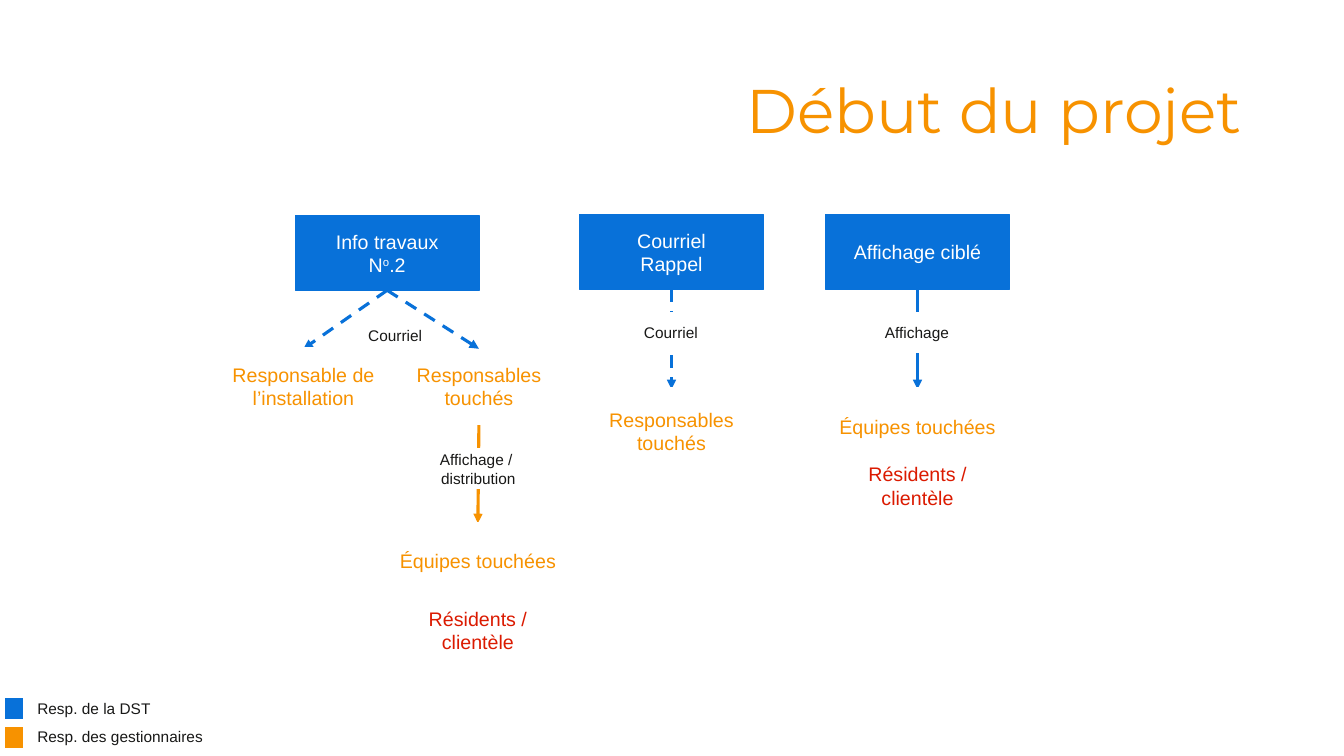
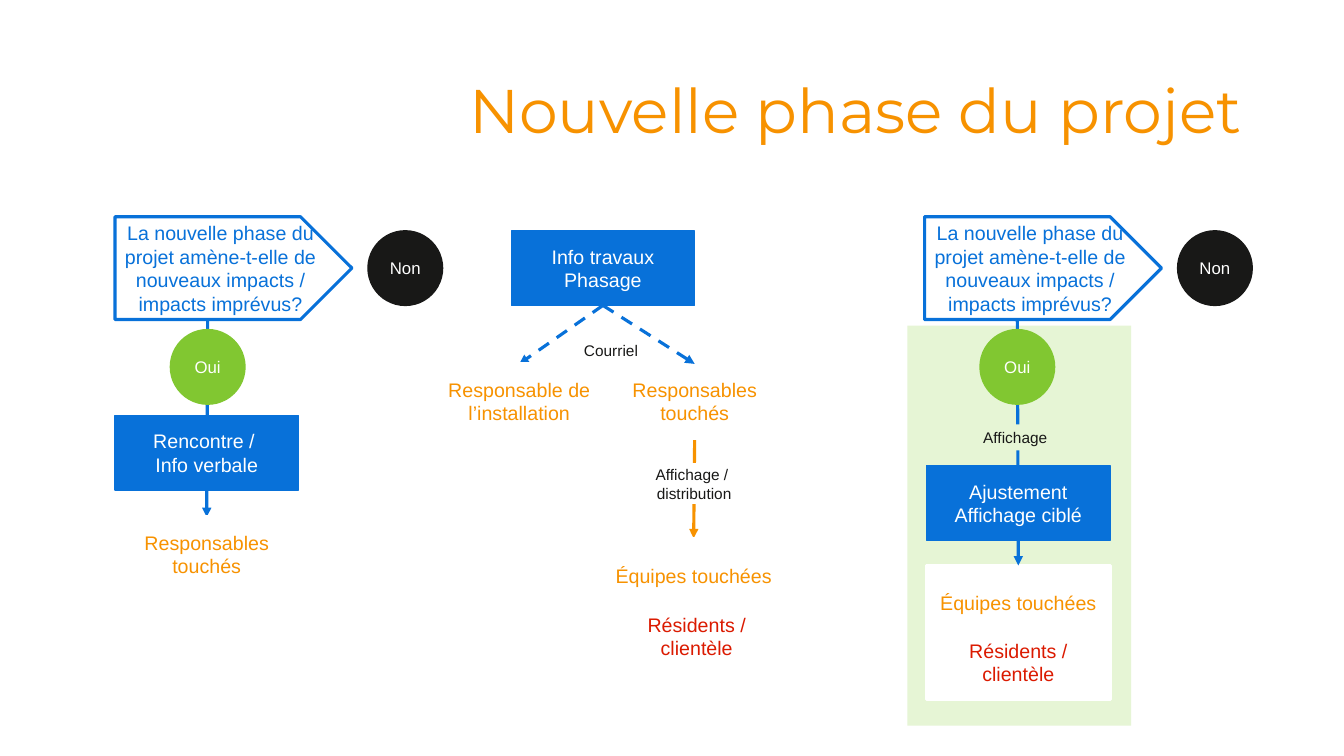
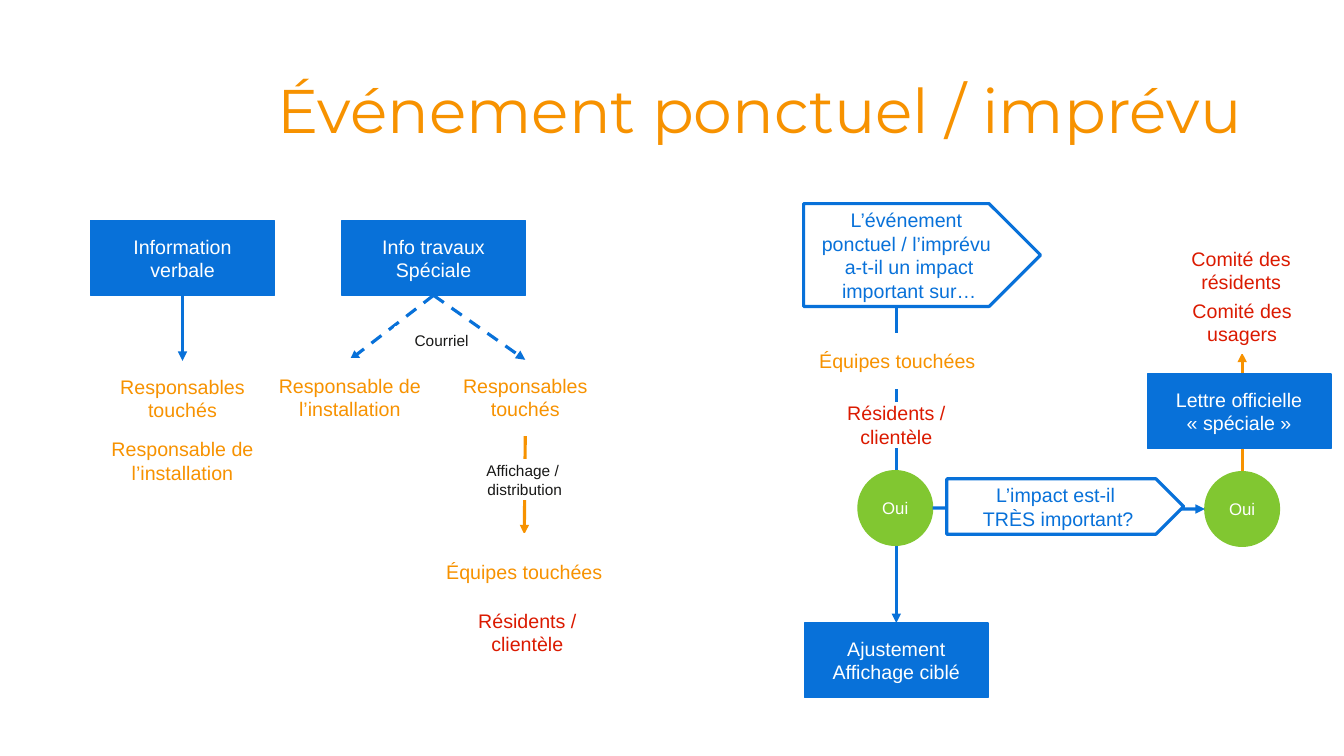
import dataclasses

import lxml.etree
import pptx
import pptx.dml.color
import pptx.enum.dml
import pptx.enum.shapes
import pptx.enum.text
import pptx.oxml.ns
import pptx.util

# Wording: "\n" breaks a line, "|" starts a paragraph, "^" toggles superscript
TITLES = ["Début du projet", "Nouvelle phase du projet", "Événement ponctuel / imprévu"]
SITE = "Responsable de l’installation"
LEADS = "Responsables touchés"
TEAMS = "Équipes touchées"
FOLK = "Résidents / clientèle"
POST = "Affichage"
SHARE = "Affichage / \ndistribution"
MAIL = "Courriel"
ADJUST = "Ajustement\nAffichage ciblé"
PHASE = "La nouvelle phase du projet amène-t-elle de nouveaux impacts / impacts imprévus?"
EVENT = "L’événement \nponctuel / l’imprévu \na-t-il un impact important sur…"
LEGEND = [("blue", "Resp. de la DST"), ("orange", "Resp. des gestionnaires")]


@dataclasses.dataclass(frozen=True)
class Theme:
    blue: str = "0871D9"
    orange: str = "F79200"
    red: str = "DB1A00"
    green: str = "81C731"
    pale: str = "E6F5D5"
    ink: str = "181817"
    white: str = "FFFFFF"
    head: str = "Montserrat"
    body: str = "Arial"
    title: int = 44
    text: int = 14
    mark: int = 12
    note: int = 11
    thick: float = 2.25
    thin: float = 1


THEME = Theme()
SIZE = (13.33, 7.5)
KIND = pptx.enum.shapes.MSO_SHAPE
TOP, LEFT, BOTTOM, RIGHT = range(4)


@dataclasses.dataclass(frozen=True)
class Style:
    w: float
    h: float
    fill: str
    edge: str
    ink: str
    size: int = THEME.text
    line: float = THEME.thick
    kind: int = KIND.RECTANGLE


STYLES = {
    "task": Style(1.82, 0.74, THEME.blue, THEME.blue, THEME.white, line=THEME.thin),
    "staff": Style(1.82, 0.74, THEME.white, THEME.white, THEME.orange),
    "public": Style(1.82, 0.74, THEME.white, THEME.white, THEME.red),
    "note": Style(1.37, 0.38, THEME.white, THEME.white, THEME.ink, THEME.note),
    "tag": Style(1.2, 0.26, THEME.pale, "", THEME.ink, THEME.note),
    "panel": Style(2.22, 3.97, THEME.pale, "", THEME.ink),
    "ask": Style(2.35, 1.02, THEME.white, THEME.blue, THEME.blue, kind=KIND.PENTAGON),
    "yes": Style(0.74, 0.74, THEME.green, THEME.green, THEME.white, THEME.mark, THEME.thin, KIND.OVAL),
    "no": Style(0.74, 0.74, THEME.ink, THEME.ink, THEME.white, THEME.mark, THEME.thin, KIND.OVAL),
}


@dataclasses.dataclass
class Box:
    name: str
    style: str
    x: float
    y: float
    text: str = ""
    w: float = 0
    h: float = 0

    @property
    def look(self):
        return STYLES[self.style]

    @property
    def frame(self):
        return self.x, self.y, self.w or self.look.w, self.h or self.look.h

    def port(self, side):
        """Point where a line meets the given side."""
        x, y, w, h = self.frame
        flat = w - h / 2 if self.style == "ask" else w
        return {TOP: (x + flat / 2, y), LEFT: (x, y + h / 2),
                BOTTOM: (x + flat / 2, y + h), RIGHT: (x + w, y + h / 2)}[side]


@dataclasses.dataclass
class Link:
    start: str
    end: str
    color: str = THEME.blue
    dash: bool = False
    sides: tuple = (BOTTOM, TOP)


def branch(x, y, label, drop=1.32, last=(0.93, 2.33)):
    """Notice sent to two groups, the second passing it on."""
    low = y + drop
    return [
        Link("leads", "teams", THEME.orange),
        Link("info", "site", dash=True),
        Box("teams", "staff", x + 0.9, low + 1.73, TEAMS),
        Box("share", "note", x + 1.13, low + 1, SHARE),
        Box("site", "staff", x - 0.83, low, SITE),
        Box("mail", "note", x + 0.53, y + 1.06, MAIL, 0.92, 0.26),
        Box("info", "task", x, y, label),
        Box("leads", "staff", x + 0.91, low, LEADS),
        Box("folk", "public", x + last[0], low + last[1], FOLK),
        Link("info", "leads", dash=True),
    ]


def choice(key, x, end, steps):
    """Question with a no beside it and a yes leading down through the steps."""
    y = 2.15
    return [
        Box(key, "ask", x, y, PHASE),
        Box(key + " no", "no", x + 2.51, y + 0.14, "Non"),
        Link(key, end),
        *steps,
        Box(key + " yes", "yes", x + 0.55, y + 1.12, "Oui"),
    ]


START = [
    Link("recall", "warned", dash=True),
    *branch(2.93, 2.14, "Info travaux\nN^o^.2", last=(0.9, 2.42)),
    Box("recall", "task", 5.75, 2.13, "Courriel\nRappel"),
    Box("by mail", "note", 5.97, 3.11, MAIL),
    Link("poster", "crews"),
    Box("poster", "task", 8.19, 2.13, "Affichage ciblé"),
    Box("crews", "staff", 8.19, 3.86, TEAMS),
    Box("by post", "note", 8.41, 3.11, POST),
    Box("guests", "public", 8.19, 4.45, FOLK),
    Box("warned", "staff", 5.75, 3.86, LEADS, h=0.84),
]

NEXT = [
    Box("panel", "panel", 9, 3.23),
    *branch(5.07, 2.29, "Info travaux\nPhasage"),
    Box("crews", "staff", 9.19, 5.61, TEAMS),
    Box("guests", "public", 9.19, 6.2, FOLK),
    *choice("post", 9.17, "crews", [
        Box("by post", "tag", 9.47, 4.21, POST),
        Box("adjust", "task", 9.19, 4.62, ADJUST)]),
    *choice("meet", 1.14, "warned", [
        Box("talk", "task", 1.14, 4.12, "Rencontre / \nInfo verbale")]),
    Box("warned", "staff", 1.14, 5.13, LEADS),
]

SUDDEN = [
    Link("grave", "users", THEME.orange, sides=(TOP, BOTTOM)),
    Link("event", "adjust"),
    Box("crews", "staff", 7.99, 3.32, TEAMS, h=0.52),
    Box("guests", "public", 7.98, 4, FOLK, h=0.43),
    Box("adjust", "task", 7.98, 6.18, ADJUST),
    *branch(3.39, 2.19, "Info travaux\nSpéciale", drop=1.38),
    Box("event", "ask", 7.97, 2.02, EVENT),
    Box("major", "yes", 8.51, 4.67, "Oui"),
    Box("talk", "task", 0.9, 2.19, "Information verbale"),
    Box("warned", "staff", 0.9, 3.58, LEADS),
    Link("talk", "warned"),
    Box("tenants", "public", 11.4, 2.31, "Comité des résidents"),
    Box("users", "public", 11.41, 2.89, "Comité des usagers", h=0.61),
    Box("grave", "yes", 11.95, 4.68, "Oui"),
    Box("letter", "task", 11.38, 3.71, "Lettre officielle|« spéciale »"),
    Box("place", "staff", 0.9, 4.2, SITE),
    Link("major", "grave", sides=(RIGHT, LEFT)),
    Box("very", "ask", 9.39, 4.75, "L’impact est-il \nTRÈS important?", h=0.55),
]


def inches(*values):
    return [pptx.util.Inches(v) for v in values]


def rgb(color):
    return pptx.dml.color.RGBColor.from_string(color)


def paint(fill, color):
    fill.solid()
    fill.fore_color.rgb = rgb(color)


def child(parent, tag, **attrs):
    return lxml.etree.SubElement(parent, pptx.oxml.ns.qn(tag), **attrs)


def write(frame, text, size, color, font=THEME.body, align="CENTER"):
    frame.word_wrap = True
    for n, part in enumerate(text.split("|")):
        para = frame.add_paragraph() if n else frame.paragraphs[0]
        para.alignment = pptx.enum.text.PP_ALIGN[align]
        for row, line in enumerate(part.split("\n")):
            if row:
                para.add_line_break()
            for i, piece in enumerate(line.split("^")):
                run = para.add_run()
                run.text = piece
                run.font.size = pptx.util.Pt(size)
                run.font.name = font
                run.font.color.rgb = rgb(color)
                if i % 2:
                    run.font._element.set("baseline", "30000")


def add_title(slide, text):
    frame = slide.shapes.add_textbox(*inches(1.94, 0.4, 10.48, 1.45)).text_frame
    frame.vertical_anchor = pptx.enum.text.MSO_ANCHOR.MIDDLE
    write(frame, text, THEME.title, THEME.orange, THEME.head, "RIGHT")
    frame.paragraphs[0].line_spacing = 0.9


def add_box(slide, box):
    look = box.look
    shape = slide.shapes.add_shape(look.kind, *inches(*box.frame))
    shape.shadow.inherit = False
    paint(shape.fill, look.fill)
    if look.edge:
        paint(shape.line.fill, look.edge)
        shape.line.width = pptx.util.Pt(look.line)
    else:
        shape.line.fill.background()
    shape.text_frame.vertical_anchor = pptx.enum.text.MSO_ANCHOR.MIDDLE
    if box.text:
        write(shape.text_frame, box.text, look.size, look.ink)
    return shape


def add_link(slide, link, boxes):
    ends = [boxes[name].port(side) for name, side in zip((link.start, link.end), link.sides)]
    line = slide.shapes.add_connector(
        pptx.enum.shapes.MSO_CONNECTOR.STRAIGHT, *inches(*ends[0], *ends[1]))
    paint(line.line.fill, link.color)
    line.line.width = pptx.util.Pt(THEME.thick)
    if link.dash:
        line.line.dash_style = pptx.enum.dml.MSO_LINE.DASH
    props = line._element.spPr
    child(props.find(pptx.oxml.ns.qn("a:ln")), "a:tailEnd", type="triangle")
    child(props, "a:effectLst")
    return line


def draw(slide, items):
    """Draw items back to front, then join lines to rectangles."""
    boxes = {item.name: item for item in items if isinstance(item, Box)}
    shapes, lines = {}, []
    for item in items:
        if isinstance(item, Box):
            shapes[item.name] = add_box(slide, item)
        else:
            lines.append((item, add_link(slide, item, boxes)))
    for link, line in lines:
        for name, side, join in ((link.start, link.sides[0], line.begin_connect),
                                 (link.end, link.sides[1], line.end_connect)):
            if boxes[name].look.kind == KIND.RECTANGLE:
                join(shapes[name], side)


def add_border(cell):
    props = cell._tc.get_or_add_tcPr()
    for n, edge in enumerate(("a:lnL", "a:lnR", "a:lnT", "a:lnB")):
        line = lxml.etree.Element(pptx.oxml.ns.qn(edge), w=str(pptx.util.Pt(6)))
        child(child(line, "a:solidFill"), "a:srgbClr", val=THEME.white)
        props.insert(n, line)


def add_legend(slide):
    cols, high = (0.26, 2), 0.28
    table = slide.shapes.add_table(
        len(LEGEND), 2, *inches(0.01, 6.89, sum(cols), high * len(LEGEND))).table
    table.first_row = table.horz_banding = False
    for col, wide in zip(table.columns, cols):
        col.width = pptx.util.Inches(wide)
    for row, (color, text) in zip(table.rows, LEGEND):
        row.height = pptx.util.Inches(high)
        swatch, label = row.cells
        for cell, fill in ((swatch, getattr(THEME, color)), (label, THEME.white)):
            paint(cell.fill, fill)
            add_border(cell)
            cell.vertical_anchor = pptx.enum.text.MSO_ANCHOR.MIDDLE
        child(swatch.text_frame.paragraphs[0]._p, "a:endParaRPr", sz=str(THEME.note * 100))
        write(label.text_frame, text, THEME.note, THEME.ink, align="LEFT")


def main():
    deck = pptx.Presentation()
    deck.slide_width, deck.slide_height = inches(*SIZE)
    for title, items in zip(TITLES, (START, NEXT, SUDDEN)):
        slide = deck.slides.add_slide(deck.slide_layouts[6])
        add_title(slide, title)
        draw(slide, items)
    add_legend(deck.slides[0])
    deck.save("out.pptx")


if __name__ == "__main__":
    main()
